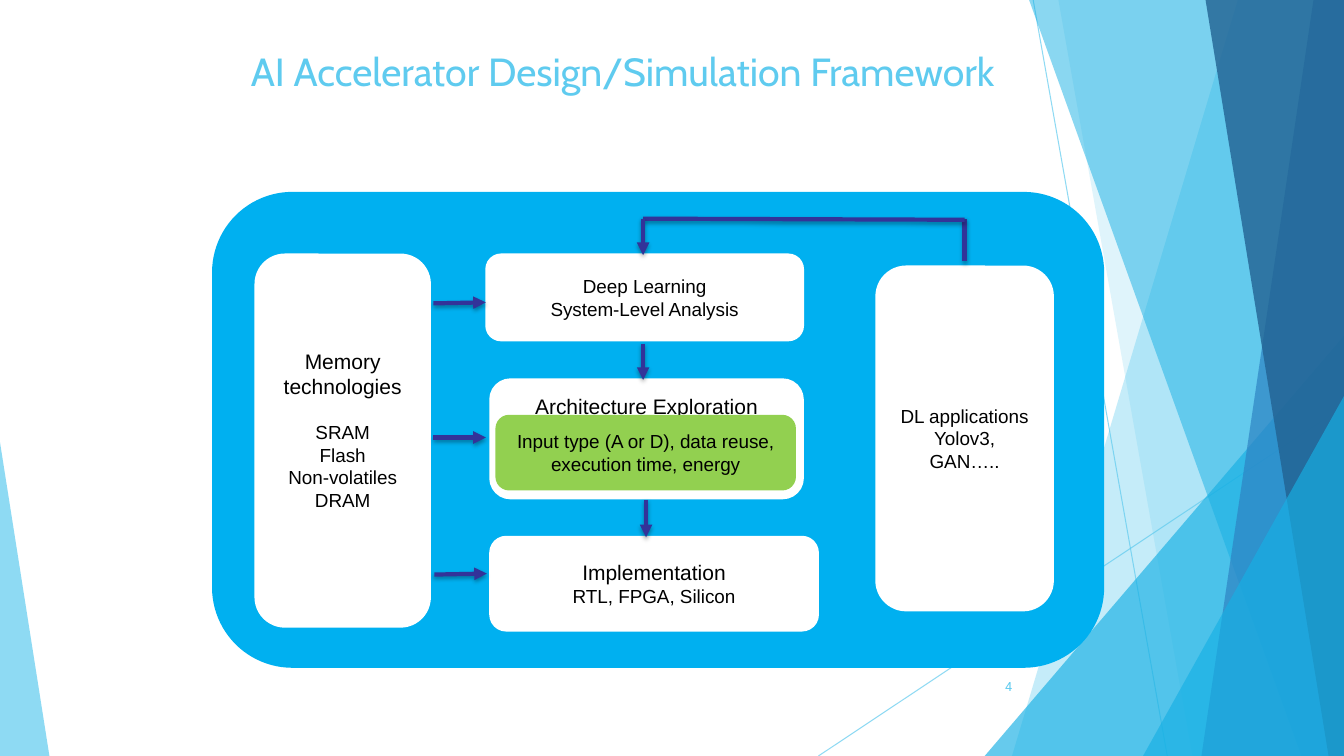
from dataclasses import dataclass

from lxml.etree import SubElement
from pptx import Presentation
from pptx.dml.color import RGBColor
from pptx.enum.shapes import MSO_CONNECTOR, MSO_SHAPE
from pptx.enum.text import MSO_ANCHOR, PP_ALIGN
from pptx.oxml import parse_xml
from pptx.oxml.ns import nsdecls, qn
from pptx.shapes.autoshape import Shape
from pptx.shapes.connector import Connector
from pptx.slide import Slide
from pptx.util import Pt

WIDTH, HEIGHT = 960, 540
WHITE = RGBColor(0xFF, 0xFF, 0xFF)
BLACK = RGBColor(0x00, 0x00, 0x00)
SKY = RGBColor(0x5F, 0xCB, 0xEF)
CYAN = RGBColor(0x17, 0xB0, 0xE4)
BLUE = RGBColor(0x2E, 0x83, 0xC3)
NAVY = RGBColor(0x22, 0x62, 0x92)
PANEL_BLUE = RGBColor(0x00, 0xB0, 0xF0)
GREEN = RGBColor(0x92, 0xD0, 0x50)
INDIGO = RGBColor(0x33, 0x33, 0x99)
HEADING, BODY = 15, 13.5
BLANK_LINE = 15.5

ARROW_SHADOW = (
    f'<a:effectLst {nsdecls("a")}>'
    '<a:outerShdw blurRad="39370" dist="22860" dir="5400000" rotWithShape="0">'
    '<a:srgbClr val="000000"><a:alpha val="35000"/></a:srgbClr>'
    '</a:outerShdw></a:effectLst>'
)
NO_EFFECT = f'<a:effectLst {nsdecls("a")}/>'


@dataclass
class Band:
    """A facet reaching the right edge, its left side slanting from top_x to bottom_x."""
    top_x: float
    bottom_x: float
    color: RGBColor
    opacity: int


@dataclass
class Wedge:
    """A right triangle standing on the bottom edge, apex at 0 (left) or 1 (right)."""
    left: float
    top: float
    width: float
    apex: int
    color: RGBColor
    opacity: int


@dataclass
class Line:
    text: str
    size: float = BODY
    space_before: float = 0


@dataclass
class Box:
    left: float
    top: float
    width: float
    height: float
    lines: tuple[Line, ...] = ()
    color: RGBColor = WHITE
    anchor: MSO_ANCHOR = MSO_ANCHOR.MIDDLE
    top_inset: float = 2.9
    bottom_inset: float = 2.9


@dataclass
class Link:
    start: tuple[float, float]
    end: tuple[float, float]
    arrow: bool = True


FACETS = (
    Band(884.2, 722.9, SKY, 36),
    Band(756, 851.8, SKY, 20),
    Wedge(703.4, 239.8, 256.6, 1, CYAN, 66),
    Band(735.1, 929.5, CYAN, 50),
    Band(938.2, 858.2, BLUE, 70),
    Band(861.1, 949, NAVY, 80),
    Wedge(816.5, 283, 143.5, 1, CYAN, 66),
    Wedge(0, 316, 35.3, 0, SKY, 70),
)
HAIRLINES = (
    Link((738, 0), (833.8, HEIGHT), False),
    Link((WIDTH, 290.2), (584.6, HEIGHT), False),
)
BOXES = (
    Box(152.6, 138.2, 635, 337.7, color=PANEL_BLUE),
    Box(182.9, 182.2, 123.8, 265, (
        Line("Memory technologies", HEADING),
        Line("SRAM", space_before=BLANK_LINE),
        Line("Flash"),
        Line("Non-volatiles"),
        Line("DRAM"),
    ), bottom_inset=2.9 + BLANK_LINE),
    Box(347.8, 182.2, 225.4, 60.5, (Line("Deep Learning"), Line("System-Level Analysis"))),
    Box(350.6, 271.4, 222.5, 84.2, (Line("Architecture Exploration", HEADING),),
        anchor=MSO_ANCHOR.TOP, top_inset=5.8),
    Box(350.6, 383.8, 233.3, 66.2,
        (Line("Implementation", HEADING), Line("RTL, FPGA, Silicon"))),
    Box(626.4, 190.8, 125.3, 244.8,
        (Line("DL applications"), Line("Yolov3,"), Line("GAN….."))),
    Box(355, 297.4, 212.4, 51.8,
        (Line("Input type (A or D), data reuse, execution time, energy"),), GREEN),
)
LINKS = (
    Link((309.6, 216.7), (347, 216)),
    Link((310.3, 410.4), (347.8, 409.7)),
    Link((309.6, 312.5), (347, 312.5)),
    Link((689, 186.5), (689, 156.2), False),
    Link((689, 157), (459.4, 156.2), False),
    Link((459.4, 156.2), (459.4, 182.2)),
    Link((459.4, 245.5), (459.4, 271.4)),
    Link((461.5, 357.1), (461.5, 383.8)),
)


def add_alpha(fill_parent, opacity: int) -> None:
    """Set the opacity, in percent, of the solid fill directly inside fill_parent."""
    color = fill_parent.find(qn("a:solidFill"))[0]
    SubElement(color, qn("a:alpha")).set("val", str(opacity * 1000))


def add_line(slide: Slide, link: Link, color: RGBColor, width: float, effects: str) -> Connector:
    connector = slide.shapes.add_connector(
        MSO_CONNECTOR.STRAIGHT, *(Pt(value) for value in link.start + link.end))
    connector.line.color.rgb = color
    connector.line.width = Pt(width)
    if link.arrow:
        SubElement(connector.line._get_or_add_ln(), qn("a:tailEnd")).set("type", "triangle")
    connector._element.spPr.append(parse_xml(effects))
    return connector


def add_facet(slide: Slide, facet: Band | Wedge) -> None:
    if isinstance(facet, Band):
        builder = slide.shapes.build_freeform(Pt(facet.top_x), 0)
        corners = ((WIDTH, 0), (WIDTH, HEIGHT), (facet.bottom_x, HEIGHT))
        builder.add_line_segments([(Pt(x), Pt(y)) for x, y in corners])
        shape = builder.convert_to_shape()
    else:
        shape = slide.shapes.add_shape(
            MSO_SHAPE.ISOSCELES_TRIANGLE, Pt(facet.left), Pt(facet.top),
            Pt(facet.width), Pt(HEIGHT - facet.top))
        shape.adjustments[0] = facet.apex
    shape.shadow.inherit = False
    shape.line.fill.background()
    shape.fill.solid()
    shape.fill.fore_color.rgb = facet.color
    add_alpha(shape._element.spPr, facet.opacity)


def add_box(slide: Slide, box: Box) -> None:
    shape = slide.shapes.add_shape(
        MSO_SHAPE.ROUNDED_RECTANGLE, Pt(box.left), Pt(box.top), Pt(box.width), Pt(box.height))
    shape.shadow.inherit = False
    shape.fill.solid()
    shape.fill.fore_color.rgb = box.color
    shape.line.color.rgb = box.color
    shape.line.width = Pt(2.25)
    frame = shape.text_frame
    frame.word_wrap = True
    frame.vertical_anchor = box.anchor
    frame.margin_left = frame.margin_right = Pt(5)
    frame.margin_top, frame.margin_bottom = Pt(box.top_inset), Pt(box.bottom_inset)
    for index, line in enumerate(box.lines):
        paragraph = frame.add_paragraph() if index else frame.paragraphs[0]
        paragraph.text = line.text
        paragraph.alignment = PP_ALIGN.CENTER
        paragraph.space_before = Pt(line.space_before)
        paragraph.font.name = "Arial"
        paragraph.font.size = Pt(line.size)
        paragraph.font.color.rgb = BLACK


def add_label(slide: Slide, text: str, left: float, top: float, width: float, height: float,
              font_name: str, size: float) -> Shape:
    label = slide.shapes.add_textbox(Pt(left), Pt(top), Pt(width), Pt(height))
    label.text_frame.word_wrap = True
    paragraph = label.text_frame.paragraphs[0]
    paragraph.text = text
    paragraph.font.name = font_name
    paragraph.font.size = Pt(size)
    paragraph.font.color.rgb = SKY
    return label


def main() -> None:
    presentation = Presentation()
    presentation.slide_width, presentation.slide_height = Pt(WIDTH), Pt(HEIGHT)
    slide = presentation.slides.add_slide(presentation.slide_layouts[6])
    for hairline in HAIRLINES:
        connector = add_line(slide, hairline, SKY, 0.75, NO_EFFECT)
        add_alpha(connector.line._get_or_add_ln(), 70)
    for facet in FACETS:
        add_facet(slide, facet)
    for box in BOXES:
        add_box(slide, box)
    for link in LINKS:
        add_line(slide, link, INDIGO, 3, ARROW_SHADOW)
    add_label(slide, "AI Accelerator Design/Simulation Framework",
              172.1, 30.2, 604, 108, "Cabin", 28)
    page_number = add_label(slide, "4", 676, 476, 54, 28.8, "Roboto", 9)
    page_number.text_frame.vertical_anchor = MSO_ANCHOR.MIDDLE
    page_number.text_frame.paragraphs[0].alignment = PP_ALIGN.RIGHT
    presentation.save("out.pptx")


if __name__ == "__main__":
    main()
